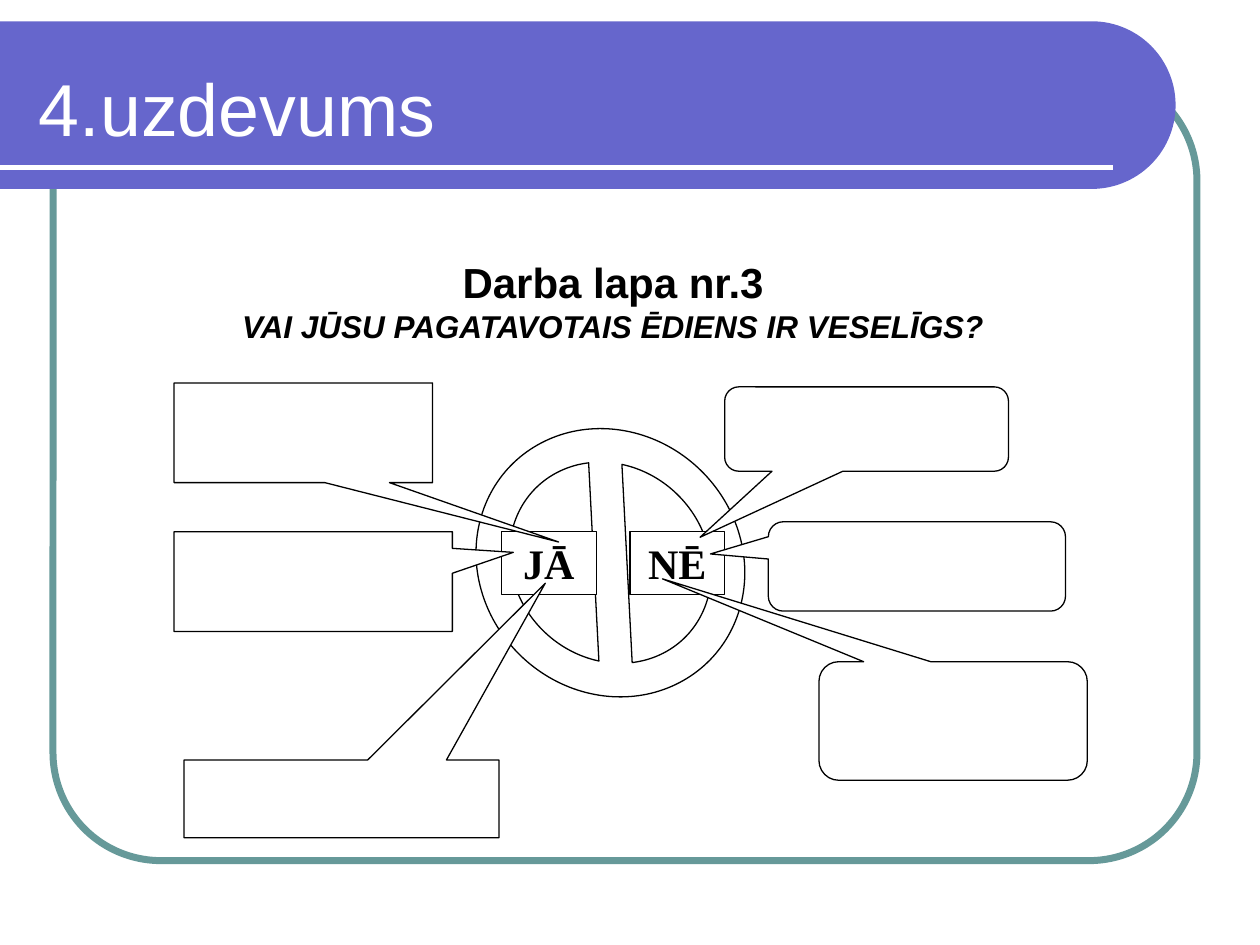
import math

from lxml import etree
from pptx import Presentation
from pptx.dml.color import RGBColor
from pptx.enum.shapes import MSO_CONNECTOR, MSO_SHAPE
from pptx.enum.text import MSO_ANCHOR, PP_ALIGN
from pptx.oxml.ns import qn
from pptx.util import Cm, Pt

RECT, ROUNDED = MSO_SHAPE.RECTANGLE, MSO_SHAPE.ROUNDED_RECTANGLE
RECT_CALLOUT = MSO_SHAPE.RECTANGULAR_CALLOUT
ROUND_CALLOUT = MSO_SHAPE.ROUNDED_RECTANGULAR_CALLOUT
NO_SYMBOL = MSO_SHAPE.NO_SYMBOL
STRAIGHT = MSO_CONNECTOR.STRAIGHT
LEFT, CENTER = PP_ALIGN.LEFT, PP_ALIGN.CENTER
TOP, MIDDLE = MSO_ANCHOR.TOP, MSO_ANCHOR.MIDDLE

THEME = {
    "white": "FFFFFF", "black": "000000", "header": "6666CC", "frame": "669999",
    "sans": "Arial", "serif": "Times New Roman",
    "title": 42, "heading": 24, "question": 18,
    "thin": 0.75, "rule": 3, "border": 4,
}

# Positions are (left, top, width, height) in centimetres.
TITLE = "4.uzdevums"
HEADING = "Darba lapa nr.3"
QUESTION = "VAI JŪSU PAGATAVOTAIS ĒDIENS IR VESELĪGS?"
ANSWERS = [("JĀ", 10.11), ("NĒ", 12.7)]
CALLOUTS = [
    (ROUND_CALLOUT, (14.61, 7.8, 5.72, 1.7), (-0.587, 1.284, 0.167)),
    (RECT_CALLOUT, (3.71, 15.32, 6.35, 1.57), (0.647, -2.769)),
    (ROUND_CALLOUT, (15.49, 10.52, 5.99, 1.8), (-0.695, -0.14, 0.167)),
    (ROUND_CALLOUT, (16.51, 13.34, 5.41, 2.39), (-1.083, -1.199, 0.167)),
    (RECT_CALLOUT, (3.51, 10.72, 5.61, 2.01), (0.719, -0.293)),
    (RECT_CALLOUT, (3.51, 7.72, 5.21, 2.01), (0.988, 1.096)),
]


def color(name):
    return RGBColor.from_string(THEME[name])


def style(sp, fill=None, line=None, width="thin"):
    sp.shadow.inherit = False
    if fill:
        sp.fill.solid()
        sp.fill.fore_color.rgb = color(fill)
    else:
        sp.fill.background()
    if line:
        sp.line.color.rgb = color(line)
        sp.line.width = Pt(THEME[width])
    else:
        sp.line.fill.background()


def add_shape(s, kind, box, adjustments=(), fill="white", line="black", width="thin"):
    sp = s.shapes.add_shape(kind, *map(Cm, box))
    for i, value in enumerate(adjustments):
        sp.adjustments[i] = value
    style(sp, fill, line, width)
    return sp


def write(p, text, size="heading", font="sans", ink="black",
          bold=False, italic=False, align=CENTER):
    p.alignment = align
    r = p.add_run()
    r.text = text
    r.font.name = THEME[font]
    r.font.size = Pt(THEME[size])
    r.font.color.rgb = color(ink)
    r.font.bold = bold
    r.font.italic = italic


def add_header(s, top=0.43, right=23.7, height=3.38):
    """Band from the slide's left edge with a half-round right end."""
    radius = height / 2
    arc = [(right - radius + radius * math.cos(math.radians(a)),
            top + radius + radius * math.sin(math.radians(a)))
           for a in range(-90, 91, 3)]
    builder = s.shapes.build_freeform(0, Cm(top))
    builder.add_line_segments([(Cm(x), Cm(y)) for x, y in arc]
                              + [(0, Cm(top + height))], close=True)
    style(builder.convert_to_shape(), fill="header")

    rule = s.shapes.add_connector(STRAIGHT, 0, Cm(3.38), Cm(22.43), Cm(3.38))
    rule.line.color.rgb = color("white")
    rule.line.width = Pt(THEME["rule"])
    etree.SubElement(rule._element.spPr, qn("a:effectLst"))


def add_title(s):
    title = s.shapes.title
    title.left, title.top, title.width, title.height = map(Cm, (0.53, 0.64, 22.28, 3.05))
    tf = title.text_frame
    tf.vertical_anchor = MIDDLE
    write(tf.paragraphs[0], TITLE, size="title", ink="white", align=LEFT)
    s.shapes._spTree.append(title._element)  # in front of the header band


def add_question(s):
    tf = s.shapes.add_textbox(*map(Cm, (3.89, 4.95, 16.94, 3.05))).text_frame
    tf.word_wrap = True
    tf.margin_top = Cm(0.23)
    write(tf.paragraphs[0], HEADING, bold=True)
    write(tf.add_paragraph(), QUESTION, size="question", bold=True, italic=True)


def add_wheel(s):
    wheel = add_shape(s, NO_SYMBOL, (9.5, 8.74, 5.61, 5.21), (0.13,))
    wheel.rotation = 44.3
    for text, left in ANSWERS:
        tf = add_shape(s, RECT, (left, 10.72, 1.91, 1.27)).text_frame
        tf.vertical_anchor = TOP
        write(tf.paragraphs[0], text, font="serif", bold=True)


def main():
    prs = Presentation()
    prs.slide_width, prs.slide_height = Cm(25.4), Cm(19.05)
    s = prs.slides.add_slide(prs.slide_layouts[5])
    add_shape(s, ROUNDED, (1.07, 1.47, 23.06, 15.88), (0.137,),
              fill=None, line="frame", width="border")
    add_header(s)
    add_title(s)
    add_question(s)
    add_wheel(s)
    for kind, box, adjustments in CALLOUTS:
        add_shape(s, kind, box, adjustments)
    prs.save("out.pptx")


if __name__ == "__main__":
    main()
